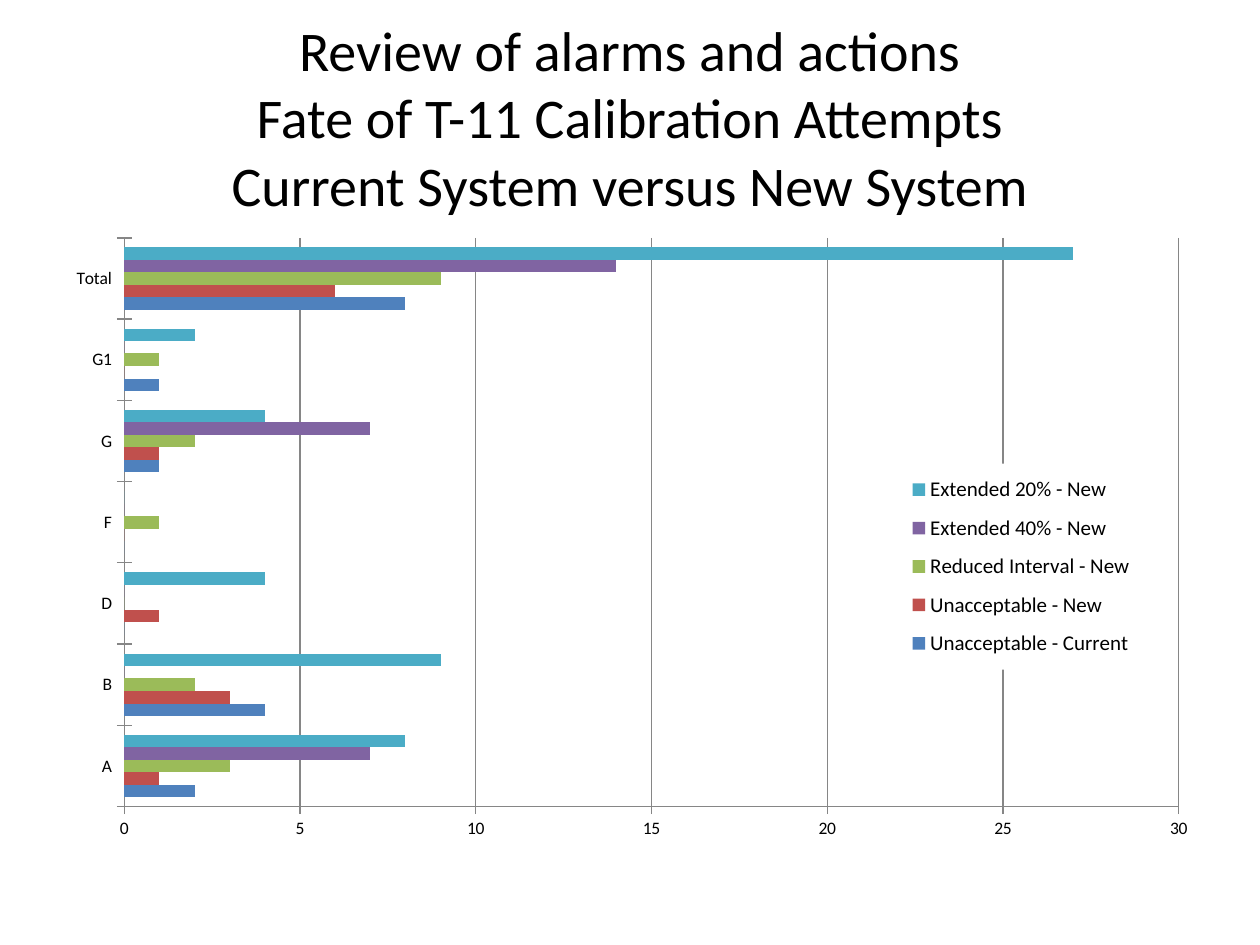
from dataclasses import dataclass

from lxml import etree
from pptx import Presentation
from pptx.chart.data import CategoryChartData
from pptx.dml.color import RGBColor
from pptx.enum.chart import XL_CHART_TYPE, XL_LEGEND_POSITION, XL_TICK_MARK
from pptx.enum.text import MSO_ANCHOR, PP_ALIGN
from pptx.oxml import parse_xml
from pptx.oxml.ns import nsdecls, qn
from pptx.util import Pt

BARS = XL_CHART_TYPE.BAR_CLUSTERED
RIGHT = XL_LEGEND_POSITION.RIGHT
CROSS = XL_TICK_MARK.CROSS
CENTER = PP_ALIGN.CENTER
MIDDLE = MSO_ANCHOR.MIDDLE


@dataclass
class Theme:
    face: str = "Calibri"
    ink: str = "000000"
    paper: str = "FFFFFF"
    rule: str = "868686"
    bars: tuple = ("4F81BD", "C0504D", "9BBB59", "8064A2", "4BACC6")
    head: int = 32
    key: int = 12
    label: int = 10


def place(node, box, inner=False):
    """Give a chart part a fixed place, as fractions of the chart."""
    for old in node.findall(qn("c:layout")):
        node.remove(old)
    layout = etree.Element(qn("c:layout"))
    manual = etree.SubElement(layout, qn("c:manualLayout"))
    tags = [("layoutTarget", "inner")] if inner else []
    tags += [("xMode", "edge"), ("yMode", "edge"), *zip("xywh", box)]
    for tag, value in tags:
        etree.SubElement(manual, qn("c:" + tag)).set("val", str(value))
    node.insert(0 if inner else 1, layout)


class Deck:
    def __init__(self, theme):
        self.theme = theme
        self.show = Presentation()
        self.show.slide_width, self.show.slide_height = Pt(720), Pt(540)
        self.slide = self.show.slides.add_slide(self.show.slide_layouts[6])

    def style(self, font, size):
        font.name, font.size = self.theme.face, Pt(size)
        font.color.rgb = RGBColor.from_string(self.theme.ink)

    def title(self, lines, box):
        frame = self.slide.shapes.add_textbox(*map(Pt, box)).text_frame
        frame.word_wrap = True
        frame.vertical_anchor = MIDDLE
        para = frame.paragraphs[0]
        para.text = "\v".join(lines)
        para.alignment = CENTER
        self.style(para.font, self.theme.head)

    def chart(self, cats, series, box, plot):
        data = CategoryChartData()
        data.categories = cats
        for name, values in series.items():
            data.add_series(name, values)
        chart = self.slide.shapes.add_chart(BARS, *map(Pt, box), data).chart
        chart.has_title = False
        self.style(chart.font, self.theme.label)
        place(chart._chartSpace.find(".//" + qn("c:plotArea")), plot, True)

        # Bars
        bars = chart.plots[0]
        bars.vary_by_categories = False
        bars.gap_width, bars.overlap = 150, 0
        for item, color in zip(bars.series, self.theme.bars):
            item.format.fill.solid()
            item.format.fill.fore_color.rgb = RGBColor.from_string(color)

        # Axes and grid
        scale = chart.value_axis
        scale.minimum_scale, scale.maximum_scale = 0, 30
        scale.major_unit = 5
        scale.has_major_gridlines = True
        for axis in (chart.category_axis, scale):
            axis.major_tick_mark = CROSS
            self.line(axis.format.line)
        self.line(scale.major_gridlines.format.line)
        return chart

    def line(self, line):
        line.color.rgb = RGBColor.from_string(self.theme.rule)
        line.width = Pt(0.75)

    def legend(self, chart, box):
        chart.has_legend = True
        legend = chart.legend
        legend.position = RIGHT
        legend.include_in_layout = False
        self.style(legend.font, self.theme.key)
        node = legend._element
        place(node, box)
        fill = parse_xml(
            f'<c:spPr {nsdecls("c", "a")}><a:solidFill>'
            f'<a:srgbClr val="{self.theme.paper}"/></a:solidFill></c:spPr>')
        node.find(qn("c:overlay")).addnext(fill)


def main():
    deck = Deck(Theme())

    # Heading
    deck.title(["Review of alarms and actions",
                "Fate of T-11 Calibration Attempts",
                "Current System versus New System"], (36, 21.6, 648, 90))

    # Calibration outcomes
    cats = ["A", "B", "D", "F", "G", "G1", "Total"]
    series = {
        "Unacceptable - Current": (2, 4, 0, 0, 1, 1, 8),
        "Unacceptable - New": (1, 3, 1, 0, 1, 0, 6),
        "Reduced Interval - New": (3, 2, 0, 1, 2, 1, 9),
        "Extended 40% - New": (7, 0, 0, 0, 7, 0, 14),
        "Extended 20% - New": (8, 9, 4, 0, 4, 2, 27),
    }
    chart = deck.chart(cats, series, (36, 126, 648, 356.4),
                       (0.054, 0.028, 0.93, 0.912))
    deck.legend(chart, (0.74, 0.39, 0.21, 0.33))

    deck.show.save("out.pptx")


if __name__ == "__main__":
    main()
